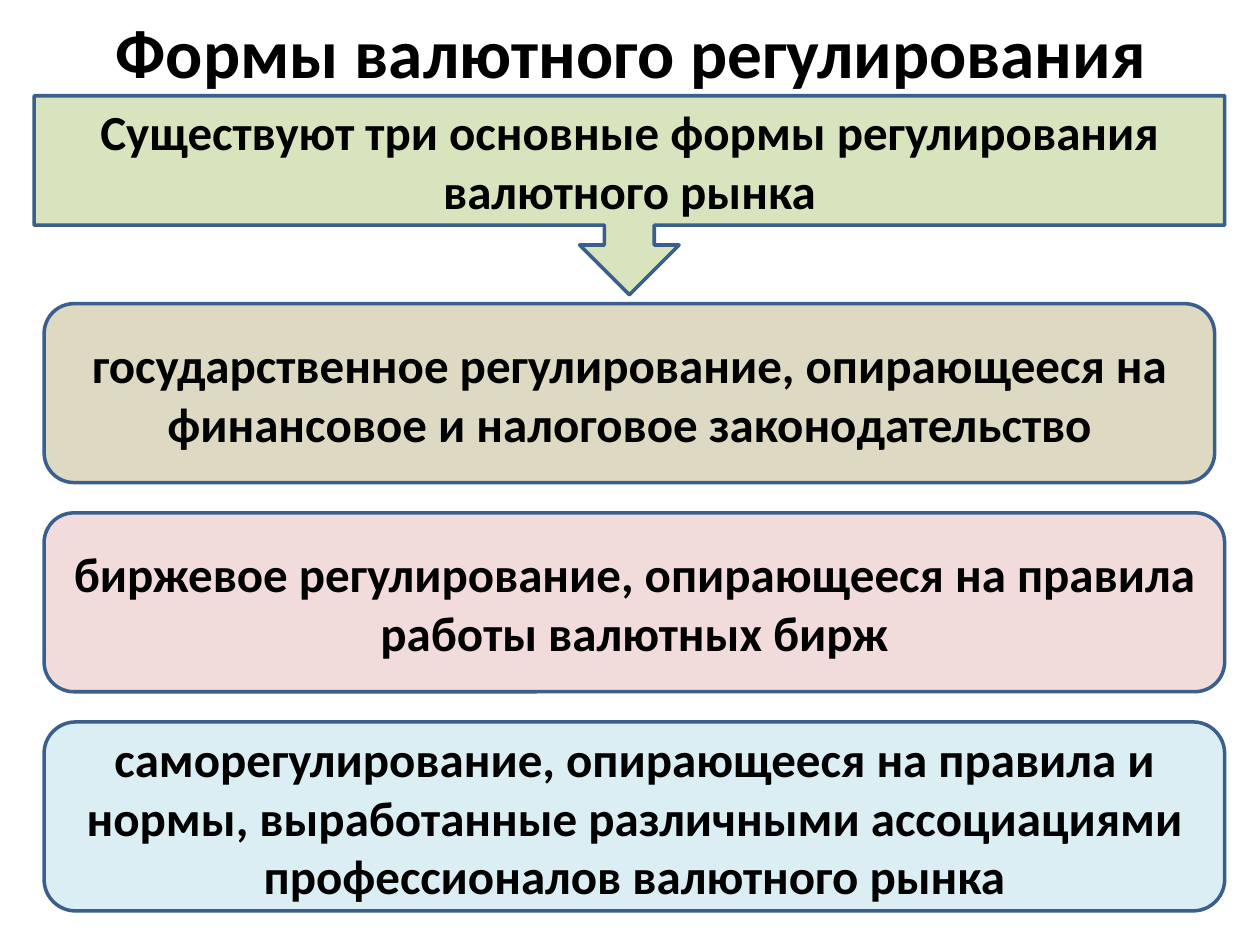
import pptx
import pptx.util
import pptx.dml.color
import pptx.enum.shapes
import pptx.enum.text

Inches = pptx.util.Inches
Pt = pptx.util.Pt
RGBColor = pptx.dml.color.RGBColor
Kind = pptx.enum.shapes.MSO_SHAPE

BLACK = RGBColor(0x00, 0x00, 0x00)
BLUE = RGBColor(0x3A, 0x5F, 0x8C)
GREEN = RGBColor(0xD7, 0xE4, 0xBD)
SAND = RGBColor(0xDD, 0xD9, 0xC3)
PINK = RGBColor(0xF2, 0xDC, 0xDB)
AQUA = RGBColor(0xDB, 0xEE, 0xF4)

# Content
TITLE = "Формы валютного регулирования"
INTRO = "Существуют три основные формы регулирования валютного рынка"
# Text, fill, width, height
FORMS = [
    ("государственное регулирование, опирающееся на финансовое "
     "и налоговое законодательство", SAND, 9.29, 1.42),
    ("биржевое регулирование, опирающееся на правила работы "
     "валютных бирж", PINK, 9.37, 1.42),
    ("саморегулирование, опирающееся на правила и нормы, выработанные "
     "различными ассоциациями профессионалов валютного рынка",
     AQUA, 9.37, 1.5),
]
LEFT, TOP, GAP = 0.35, 2.41, 0.24


def write(shape, text, size):
    frame = shape.text_frame
    frame.word_wrap = True
    frame.vertical_anchor = pptx.enum.text.MSO_ANCHOR.MIDDLE
    para = frame.paragraphs[0]
    para.alignment = pptx.enum.text.PP_ALIGN.CENTER
    run = para.add_run()
    run.text = text
    run.font.name = "Calibri"
    run.font.size = Pt(size)
    run.font.bold = True
    run.font.color.rgb = BLACK


def add_box(slide, kind, place, fill, text):
    box = slide.shapes.add_shape(kind, *map(Inches, place))
    box.shadow.inherit = False
    box.fill.solid()
    box.fill.fore_color.rgb = fill
    box.line.color.rgb = BLUE
    box.line.width = Pt(2)
    write(box, text, 28)


def main():
    deck = pptx.Presentation()
    deck.slide_width = Inches(10)
    deck.slide_height = Inches(7.5)
    slide = deck.slides.add_slide(deck.slide_layouts[6])

    # Title
    title = slide.shapes.add_textbox(*map(Inches, (0.51, 0.13, 9, 0.54)))
    write(title, TITLE, 39.6)

    # Stack of the three forms
    top = TOP
    for text, fill, width, height in FORMS:
        add_box(slide, Kind.ROUNDED_RECTANGLE, (LEFT, top, width, height),
                fill, text)
        top += height + GAP

    # Callout pointing down to the forms
    add_box(slide, Kind.DOWN_ARROW_CALLOUT, (0.27, 0.76, 9.45, 1.58),
            GREEN, INTRO)

    deck.save("out.pptx")


if __name__ == "__main__":
    main()
